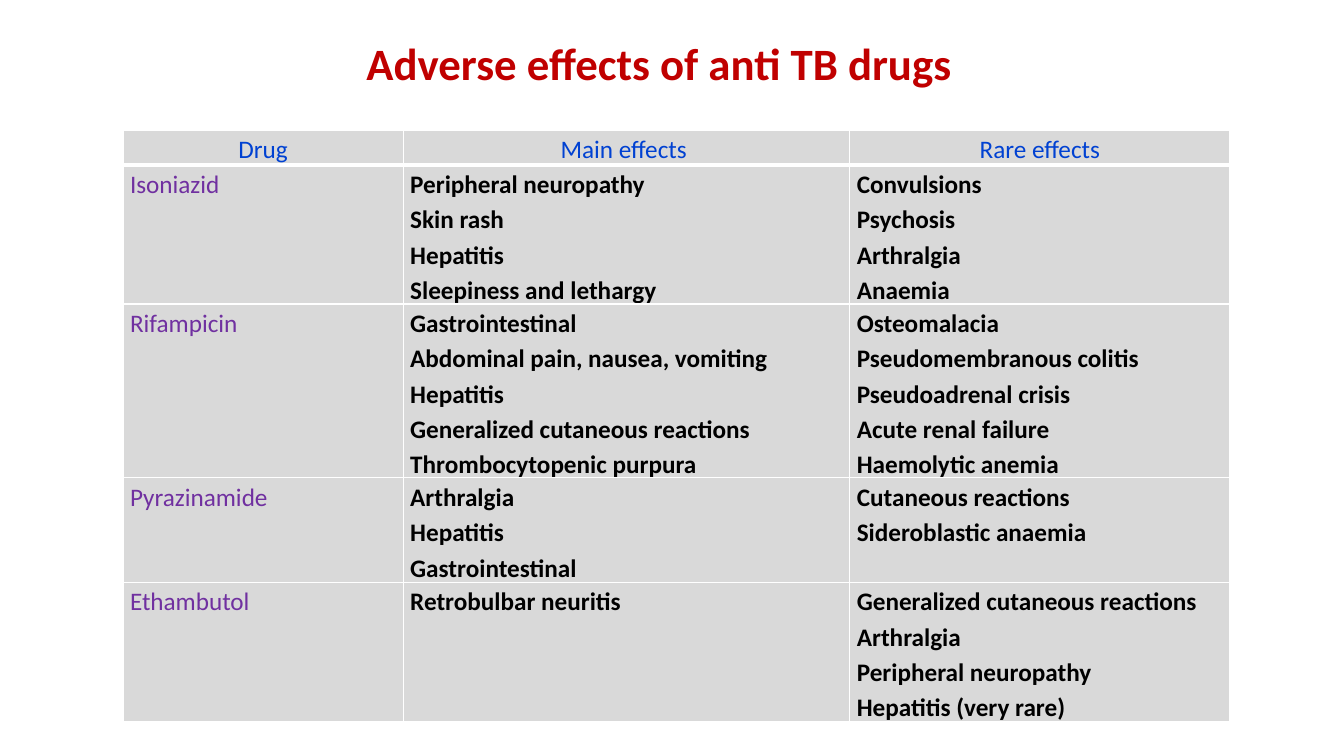
from lxml.etree import SubElement
from pptx import Presentation
from pptx.dml.color import RGBColor
from pptx.enum.text import MSO_AUTO_SIZE, PP_ALIGN
from pptx.oxml.ns import qn
from pptx.util import Inches, Pt

RED = RGBColor(0xC0, 0x00, 0x00)
BLUE = RGBColor(0x00, 0x41, 0xD2)
PURPLE = RGBColor(0x70, 0x30, 0xA0)
BLACK = RGBColor(0x00, 0x00, 0x00)
GREY = RGBColor(0xD9, 0xD9, 0xD9)
WHITE = RGBColor(0xFF, 0xFF, 0xFF)

HEADINGS = ["Drug", "Main effects ", "Rare effects"]
DRUGS = [
    ("Isoniazid",
     ["Peripheral neuropathy", "Skin rash", "Hepatitis", "Sleepiness and lethargy"],
     ["Convulsions", "Psychosis", "Arthralgia", "Anaemia"]),
    ("Rifampicin",
     ["Gastrointestinal", "Abdominal pain, nausea, vomiting", "Hepatitis",
      "Generalized cutaneous reactions", "Thrombocytopenic purpura"],
     ["Osteomalacia", "Pseudomembranous colitis", "Pseudoadrenal crisis",
      "Acute renal failure", "Haemolytic anemia"]),
    ("Pyrazinamide",
     ["Arthralgia", "Hepatitis", "Gastrointestinal"],
     ["Cutaneous reactions", "Sideroblastic anaemia"]),
    ("Ethambutol",
     ["Retrobulbar neuritis"],
     ["Generalized cutaneous reactions", "Arthralgia", "Peripheral neuropathy",
      "Hepatitis (very rare)"]),
]


class Deck:
    """Holds the style and the current slide; lengths are percent of the slide's size."""

    font = "Calibri"
    title_size = Pt(32)
    body_size = Pt(18)
    line_spacing = 1.15

    def __init__(self):
        self.prs = Presentation()
        self.prs.slide_width, self.prs.slide_height = Inches(13.33), Inches(7.5)
        self.s = self.prs.slides.add_slide(self.prs.slide_layouts[6])

    def x(self, share):
        return int(self.prs.slide_width * share / 100)

    def y(self, share):
        return int(self.prs.slide_height * share / 100)

    def text(self, tf, lines, size, color, bold=False, align=PP_ALIGN.LEFT, spacing=None):
        for i, line in enumerate(lines):
            p = tf.paragraphs[0] if i == 0 else tf.add_paragraph()
            p.alignment = align
            p.line_spacing = spacing
            r = p.add_run()
            r.text = line
            r.font.name, r.font.size, r.font.bold = self.font, size, bold
            r.font.color.rgb = color

    def title(self, left, top, width, height, text):
        sp = self.s.shapes.add_textbox(self.x(left), self.y(top), self.x(width), self.y(height))
        tf = sp.text_frame
        tf.word_wrap = True
        tf.auto_size = MSO_AUTO_SIZE.SHAPE_TO_FIT_TEXT
        self.text(tf, [text], self.title_size, RED, True, PP_ALIGN.CENTER)

    def borders(self, cell, bottom):
        tc_pr = cell._tc.get_or_add_tcPr()
        for side, width in (("L", 1), ("R", 1), ("T", 1), ("B", bottom)):
            ln = SubElement(tc_pr, qn(f"a:ln{side}"), w=str(Pt(width)))
            fill = SubElement(ln, qn("a:solidFill"))
            SubElement(fill, qn("a:srgbClr"), val=str(WHITE))

    def cell(self, cell, lines, color, bold=False, align=PP_ALIGN.LEFT, bottom=1):
        self.borders(cell, bottom)
        cell.fill.solid()
        cell.fill.fore_color.rgb = GREY
        cell.margin_left = cell.margin_right = Inches(0.07)
        cell.margin_top = cell.margin_bottom = 0
        self.text(cell.text_frame, lines, self.body_size, color, bold, align, self.line_spacing)

    def drug_table(self, left, top, col_widths, line_height, headings, drugs):
        """Each row is as tall as its longest list of effects."""
        counts = [1] + [max(len(main), len(rare)) for _, main, rare in drugs]
        table = self.s.shapes.add_table(
            len(counts), len(headings), self.x(left), self.y(top),
            self.x(sum(col_widths)), self.y(line_height * sum(counts))).table
        for column, width in zip(table.columns, col_widths):
            column.width = self.x(width)
        for row, count in zip(table.rows, counts):
            row.height = self.y(line_height * count)
        for c, heading in enumerate(headings):
            self.cell(table.cell(0, c), [heading], BLUE, align=PP_ALIGN.CENTER, bottom=3)
        for r, (drug, main, rare) in enumerate(drugs, 1):
            self.cell(table.cell(r, 0), [drug], PURPLE)
            self.cell(table.cell(r, 1), main, BLACK, bold=True)
            self.cell(table.cell(r, 2), rare, BLACK, bold=True)


def main():
    deck = Deck()
    deck.title(8.25, 4, 81.6, 8.53, "Adverse effects of anti TB drugs")
    deck.drug_table(9.15, 17.2, [20.85, 33.23, 28.28], 4.59, HEADINGS, DRUGS)
    deck.prs.save("out.pptx")


if __name__ == "__main__":
    main()
